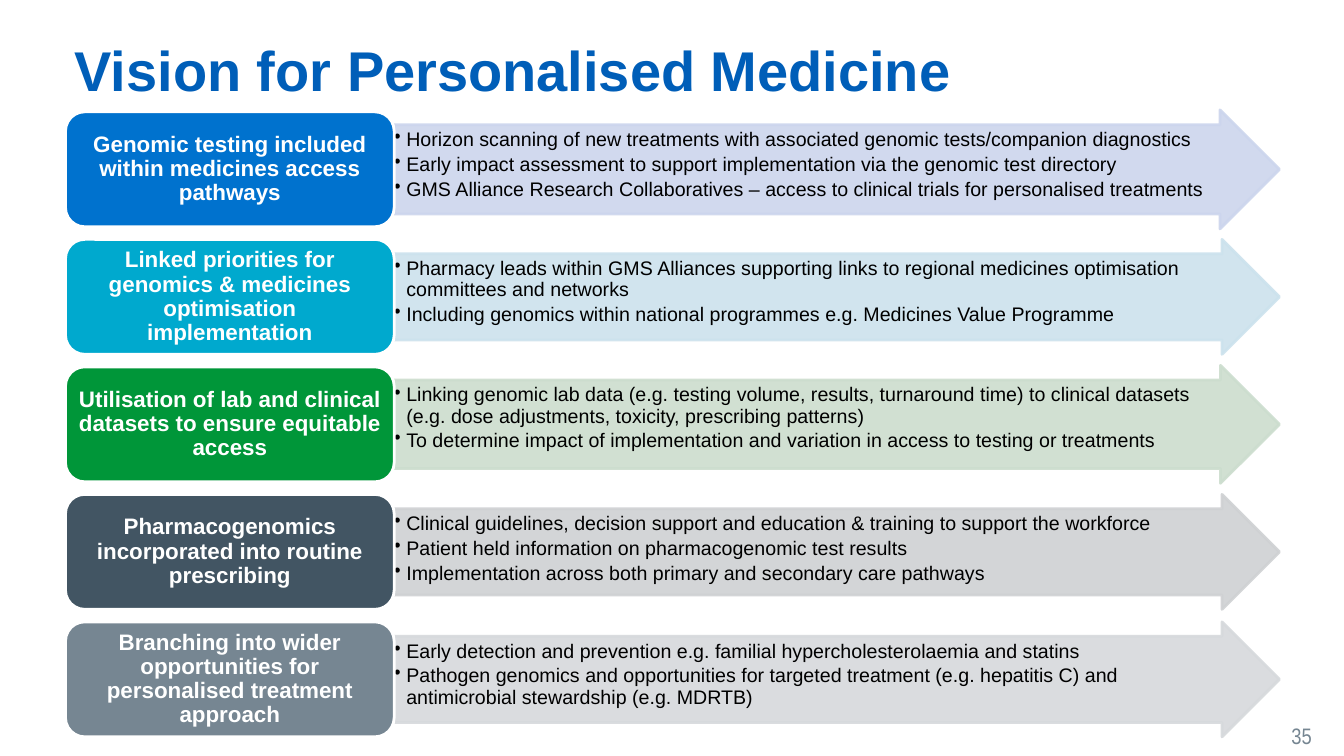
from lxml import etree
from pptx import Presentation
from pptx.dml.color import RGBColor
from pptx.enum.shapes import MSO_SHAPE
from pptx.enum.text import MSO_ANCHOR, MSO_AUTO_SIZE, PP_ALIGN
from pptx.oxml.ns import qn
from pptx.util import Inches, Pt

ARROW = MSO_SHAPE.RIGHT_ARROW
ROUNDED = MSO_SHAPE.ROUNDED_RECTANGLE
TOP, MIDDLE, BOTTOM = MSO_ANCHOR.TOP, MSO_ANCHOR.MIDDLE, MSO_ANCHOR.BOTTOM
LEFT, CENTER = PP_ALIGN.LEFT, PP_ALIGN.CENTER
NO_AUTOFIT = MSO_AUTO_SIZE.NONE

FIRST_ROW_TOP = 1.11
ROW_PITCH = 1.265
BOX_HEIGHT = 1.14
BOX_LEFT = 0.65
BOX_WIDTH = 3.26
ARROW_WIDTH = 8.78

ROWS = [
    ("Genomic testing included within medicines access pathways", "0072CE", "CCD5ED", 1.18, [
        "Horizon scanning of new treatments with associated genomic tests/companion diagnostics",
        "Early impact assessment to support implementation via the genomic test directory",
        "GMS Alliance Research Collaboratives – access to clinical trials for personalised treatments",
    ]),
    ("Linked priorities for genomics & medicines optimisation implementation", "00A9CE", "CCE2ED", 1.14, [
        "Pharmacy leads within GMS Alliances supporting links to regional medicines optimisation "
        "committees and networks",
        "Including genomics within national programmes e.g. Medicines Value Programme",
    ]),
    ("Utilisation of lab and clinical datasets to ensure equitable access", "009639", "CCDDCE", 1.17, [
        "Linking genomic lab data (e.g. testing volume, results, turnaround time) to clinical datasets "
        "(e.g. dose adjustments, toxicity, prescribing patterns)",
        "To determine impact of implementation and variation in access to testing or treatments",
    ]),
    ("Pharmacogenomics incorporated into routine prescribing", "425563", "CFD1D3", 1.14, [
        "Clinical guidelines, decision support and education & training to support the workforce",
        "Patient held information on pharmacogenomic test results",
        "Implementation across both primary and secondary care pathways",
    ]),
    ("Branching into wider opportunities for personalised treatment approach", "768692", "D6D9DC", 1.14, [
        "Early detection and prevention e.g. familial hypercholesterolaemia and statins",
        "Pathogen genomics and opportunities for targeted treatment (e.g. hepatitis C) and antimicrobial "
        "stewardship (e.g. MDRTB)",
    ]),
]


def add_block(kind, left, top, width, height, fill, line, insets, anchor):
    shape = slide.shapes.add_shape(kind, Inches(left), Inches(top), Inches(width), Inches(height))
    shape.shadow.inherit = False
    shape.fill.solid()
    shape.fill.fore_color.rgb = RGBColor.from_string(fill)
    shape.line.color.rgb = RGBColor.from_string(line)
    shape.line.width = Pt(2)
    frame = shape.text_frame
    frame.word_wrap = True
    frame.vertical_anchor = anchor
    frame.margin_left, frame.margin_top, frame.margin_right, frame.margin_bottom = map(Inches, insets)
    return shape


def format_paragraph(paragraph, size, color, bold=False, align=LEFT, name="Arial"):
    paragraph.alignment = align
    paragraph.line_spacing = 0.9
    for run in paragraph.runs:
        run.font.name = name
        run.font.size = Pt(size)
        run.font.bold = bold
        run.font.color.rgb = RGBColor.from_string(color)


presentation = Presentation()
presentation.slide_width = Inches(13.33)
presentation.slide_height = Inches(7.5)
slide = presentation.slides.add_slide(presentation.slide_layouts[5])

title = slide.shapes.title
title.left, title.top, title.width, title.height = map(Inches, (0.64, 0.35, 10.73, 0.73))
title.text_frame.text = "Vision for Personalised Medicine"
title.text_frame.vertical_anchor = BOTTOM
title.text_frame.auto_size = NO_AUTOFIT
format_paragraph(title.text_frame.paragraphs[0], 40, "005EB8", bold=True)

page_number = slide.shapes.add_textbox(Inches(12.71), Inches(7.11), Inches(0.54), Inches(0.32))
page_number.text_frame.word_wrap = True
page_number.text_frame.text = "35"
format_paragraph(page_number.text_frame.paragraphs[0], 16, "768692", name="Arial Narrow")
page_number.text_frame.paragraphs[0].line_spacing = 1.0

for row, (heading, box_color, arrow_color, arrow_height, bullets) in enumerate(ROWS):
    box_top = FIRST_ROW_TOP + row * ROW_PITCH
    arrow_top = box_top + (BOX_HEIGHT - arrow_height) / 2

    arrow = add_block(ARROW, BOX_LEFT + BOX_WIDTH, arrow_top, ARROW_WIDTH, arrow_height,
                      arrow_color, arrow_color, (0, 0.05, 0.29, 0), TOP)
    arrow.adjustments[0] = 0.75
    arrow.adjustments[1] = 0.5
    for color_element in arrow._element.spPr.iter(qn("a:srgbClr")):
        etree.SubElement(color_element, qn("a:alpha"), val="90000")
    arrow.text_frame.text = "\n".join(bullets)
    for paragraph in arrow.text_frame.paragraphs:
        properties = paragraph._p.get_or_add_pPr()
        properties.set("marL", str(Inches(0.12)))
        properties.set("indent", str(-Inches(0.12)))
        etree.SubElement(properties, qn("a:buChar"), char="•")
        format_paragraph(paragraph, 14, "000000")
        paragraph.space_after = Pt(2.5)

    box = add_block(ROUNDED, BOX_LEFT, box_top, BOX_WIDTH, BOX_HEIGHT,
                    box_color, "FFFFFF", (0.07, 0.03, 0.07, 0.03), MIDDLE)
    box.text_frame.text = heading
    format_paragraph(box.text_frame.paragraphs[0], 16, "FFFFFF", bold=True, align=CENTER)

presentation.save("out.pptx")
